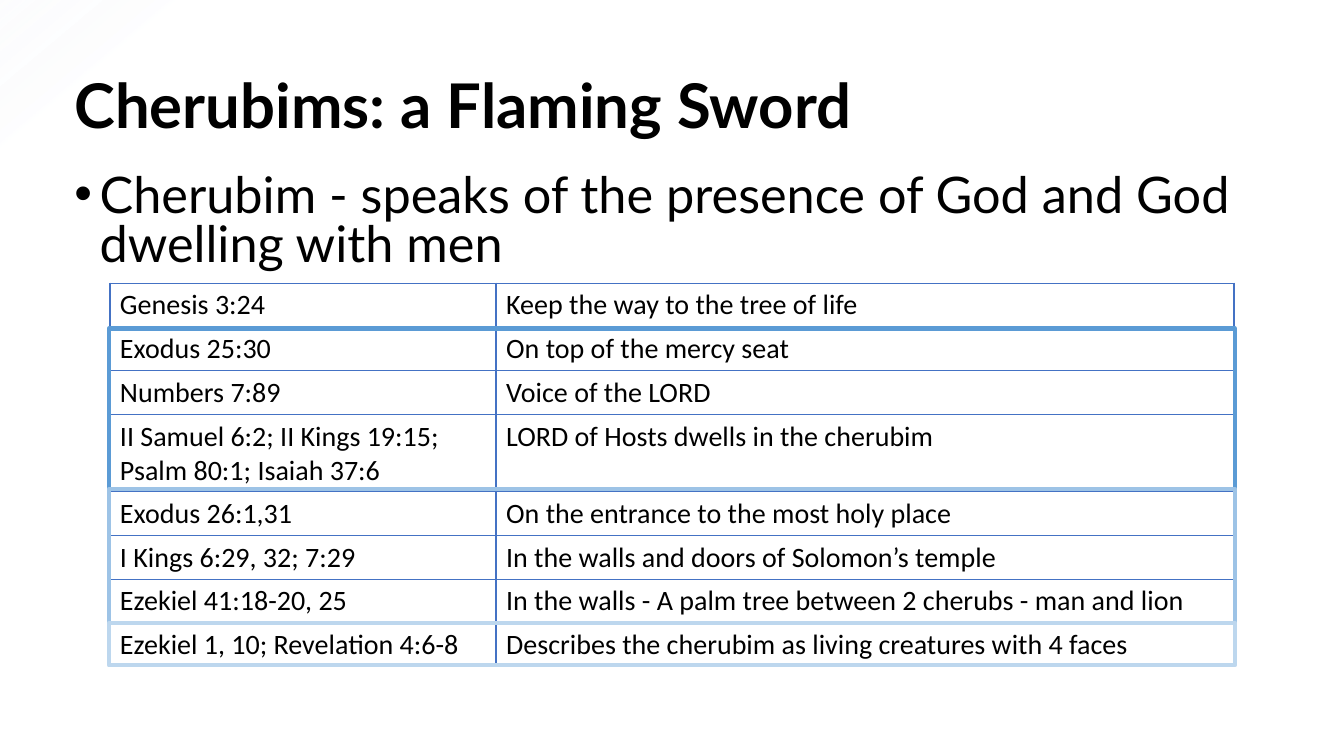
"""Build the slide on the cherubim with its table of references."""
from lxml.etree import SubElement
from pptx import Presentation
from pptx.dml.color import RGBColor
from pptx.enum.shapes import MSO_SHAPE
from pptx.enum.text import MSO_ANCHOR
from pptx.oxml import parse_xml
from pptx.oxml.ns import nsdecls, qn
from pptx.util import Inches, Pt

TITLE = "Cherubims: a Flaming Sword"
BODY = "Cherubim - speaks of the presence of God and God dwelling with men"
REFERENCES = [
    ("Genesis 3:24", "Keep the way to the tree of life"),
    ("Exodus 25:30", "On top of the mercy seat"),
    ("Numbers 7:89", "Voice of the LORD"),
    ("II Samuel 6:2; II Kings 19:15; Psalm 80:1; Isaiah 37:6", "LORD of Hosts dwells in the cherubim"),
    ("Exodus 26:1,31", "On the entrance to the most holy place"),
    ("I Kings 6:29, 32; 7:29", "In the walls and doors of Solomon’s temple"),
    ("Ezekiel 41:18-20, 25", "In the walls - A palm tree between 2 cherubs - man and lion"),
    ("Ezekiel 1, 10; Revelation 4:6-8", "Describes the cherubim as living creatures with 4 faces"),
]
COLORS = {
    "text": "000000", "border": "4472C4", "presence": "5B9BD5",
    "temple": "9DC3E6", "creatures": "BDD7EE", "glow": "F6F8FC", "white": "FFFFFF",
}
GLOW_STOPS = [(29, "glow", 25), (45, "white", 70), (50, "white", 85), (63, "white", 100)]
GLOW_ANGLE = 50
COLUMN_WIDTHS = (3.83, 7.32)
ROW_HEIGHT = 0.41
FRAME_LEFT, FRAME_TOP, FRAME_WIDTH = 1.08, 3.26, 11.17
FRAMES = [("presence", 1.59), ("temple", 1.33), ("creatures", 0.42)]
TITLE_FONT = {"name": "Lato", "size": Pt(44), "bold": True}
BODY_FONT = {"name": "Lato", "size": Pt(36), "bold": False}
CELL_FONT = {"name": "Calibri", "size": Pt(20), "bold": False}


def write(paragraph, text, font_format):
    run = paragraph.add_run()
    run.text = text
    for name, value in font_format.items():
        setattr(run.font, name, value)
    run.font.color.rgb = RGBColor.from_string(COLORS["text"])


def add_rectangle(slide, *box):
    shape = slide.shapes.add_shape(MSO_SHAPE.RECTANGLE, *map(Inches, box))
    shape.shadow.inherit = False
    shape.fill.background()
    shape.line.fill.background()
    return shape


def add_glow(slide):
    shape = add_rectangle(slide, -1.84, -1.21, 6.22, 4.31)
    stops = "".join(
        f'<a:gs pos="{position * 1000}"><a:srgbClr val="{COLORS[color]}">'
        f'<a:alpha val="{opacity * 1000}"/></a:srgbClr></a:gs>'
        for position, color, opacity in GLOW_STOPS
    )
    gradient = parse_xml(
        f'<a:gradFill {nsdecls("a")} rotWithShape="1"><a:gsLst>{stops}</a:gsLst>'
        f'<a:lin ang="{GLOW_ANGLE * 60000}" scaled="0"/></a:gradFill>'
    )
    properties = shape.element.spPr
    properties.replace(properties.find(qn("a:noFill")), gradient)


def add_text(slide, top, height, anchor, line_spacing):
    box = slide.shapes.add_textbox(*map(Inches, (0.64, top, 12.06, height)))
    box.text_frame.word_wrap = True
    box.text_frame.vertical_anchor = anchor
    paragraph = box.text_frame.paragraphs[0]
    paragraph.line_spacing = line_spacing
    return paragraph


def add_bullet(paragraph):
    properties = paragraph._p.get_or_add_pPr()
    properties.set("marL", str(Inches(0.25)))
    properties.set("indent", str(Inches(-0.25)))
    SubElement(properties, qn("a:buFont"), typeface="Arial")
    SubElement(properties, qn("a:buChar"), char="•")


def add_borders(cell):
    properties = cell._tc.get_or_add_tcPr()
    for side in ("lnL", "lnR", "lnT", "lnB"):
        line = SubElement(properties, qn(f"a:{side}"), w=str(Pt(1)))
        fill = SubElement(line, qn("a:solidFill"))
        SubElement(fill, qn("a:srgbClr"), val=COLORS["border"])


def add_references(slide):
    size = (sum(COLUMN_WIDTHS), ROW_HEIGHT * len(REFERENCES))
    table = slide.shapes.add_table(
        len(REFERENCES), len(COLUMN_WIDTHS), *map(Inches, (1.09, 2.81, *size))
    ).table
    table.first_row = table.horz_banding = False
    for column, width in zip(table.columns, COLUMN_WIDTHS):
        column.width = Inches(width)
    for row, texts in zip(table.rows, REFERENCES):
        row.height = Inches(ROW_HEIGHT)
        for cell, text in zip(row.cells, texts):
            add_borders(cell)
            cell.fill.background()
            write(cell.text_frame.paragraphs[0], text, CELL_FONT)


def add_frames(slide):
    top = FRAME_TOP
    for color, height in FRAMES:
        frame = add_rectangle(slide, FRAME_LEFT, top, FRAME_WIDTH, height)
        frame.line.color.rgb = RGBColor.from_string(COLORS[color])
        frame.line.width = Pt(3)
        top += height


def main():
    presentation = Presentation()
    presentation.slide_width, presentation.slide_height = Inches(13.33), Inches(7.5)
    slide = presentation.slides.add_slide(presentation.slide_layouts[6])
    add_glow(slide)
    write(add_text(slide, 0.35, 1.45, MSO_ANCHOR.MIDDLE, 0.9), TITLE, TITLE_FONT)
    body = add_text(slide, 1.69, 1.17, MSO_ANCHOR.TOP, 0.8)
    add_bullet(body)
    write(body, BODY, BODY_FONT)
    add_references(slide)
    add_frames(slide)
    presentation.save("out.pptx")


if __name__ == "__main__":
    main()
